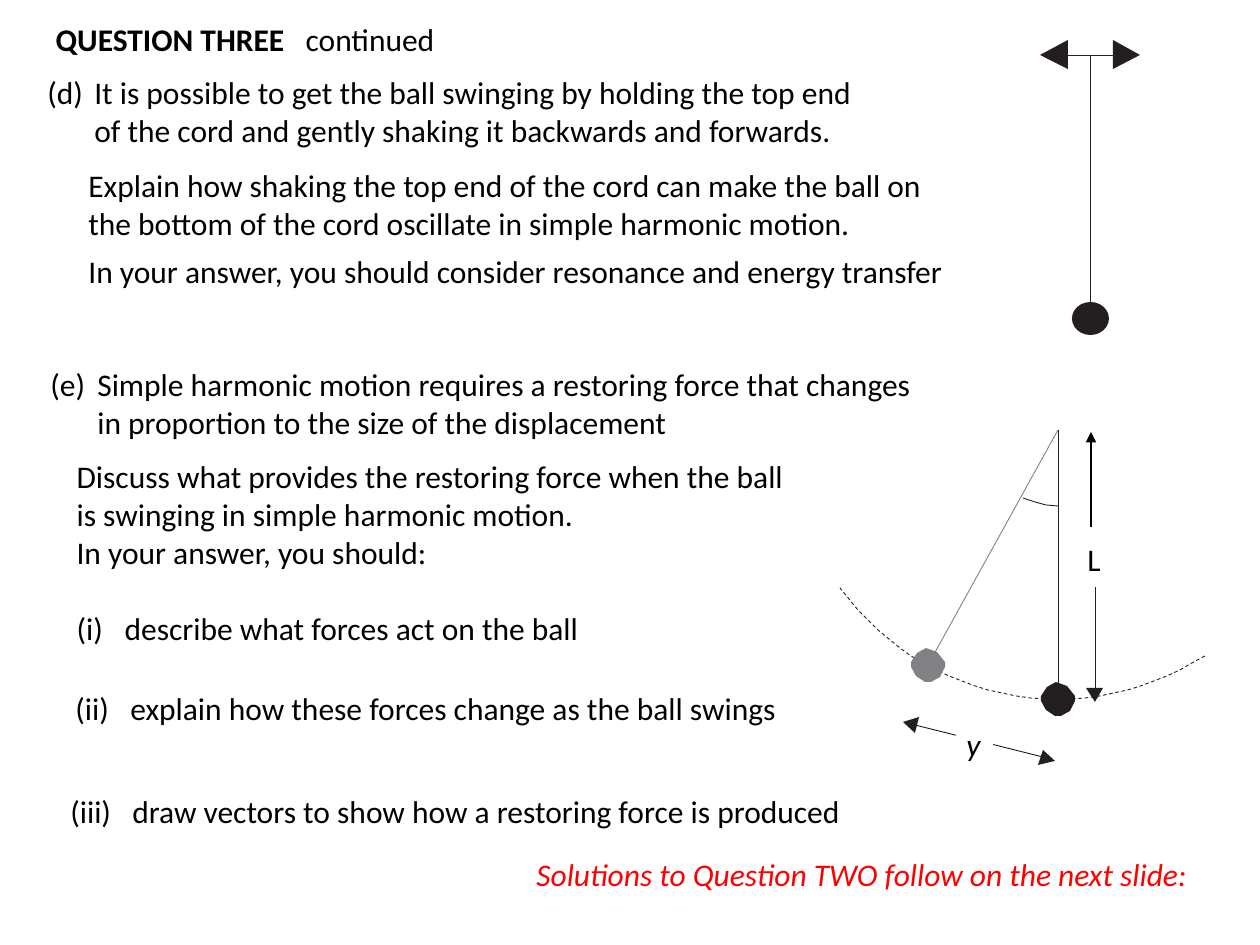
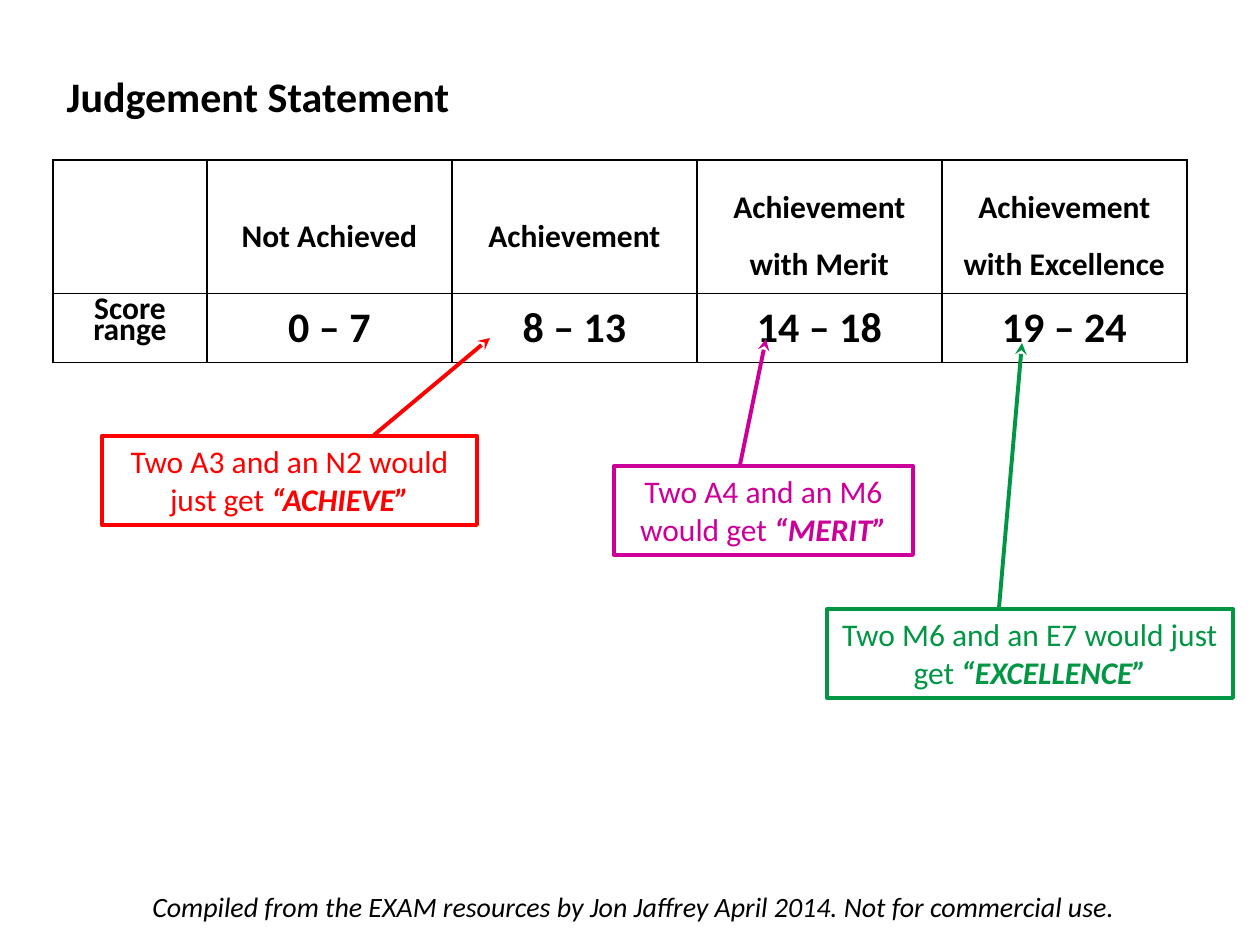
import math
from dataclasses import dataclass

import pptx
import pptx.util
from pptx.dml.color import RGBColor
from pptx.enum.dml import MSO_LINE
from pptx.enum.shapes import MSO_CONNECTOR, MSO_SHAPE
from pptx.enum.text import MSO_ANCHOR, MSO_AUTO_SIZE, PP_ALIGN
from pptx.oxml.ns import qn
from pptx.oxml.xmlchemy import OxmlElement


@dataclass(frozen=True)
class Theme:
    font: str = "Calibri"
    text: str = "000000"
    ink: str = "231F20"
    grey: str = "808285"
    white: str = "FFFFFF"
    red: str = "FF0000"
    pink: str = "CC0099"
    green: str = "009644"
    body: int = 18
    head: int = 24
    foot: int = 16
    thin: float = 0.5
    bold: float = 2.25


T = Theme()
SCALE = 914400 / 126  # EMU in one px


def px(n):
    return round(n * SCALE)


def place(shape, box):
    shape.left, shape.top, shape.width, shape.height = map(px, box)


def rgb(code):
    return RGBColor.from_string(code)


def node(parent, tag, **attrs):
    item = OxmlElement(tag)
    for key, value in attrs.items():
        item.set(key, str(value))
    parent.append(item)
    return item


# Text

def write(par, parts, size=T.body, color=T.text, align=PP_ALIGN.LEFT):
    """Each part is a text and its style: b for bold, i for italic."""
    for i, (text, style) in enumerate(parts):
        if i == 0:
            par.text = text
            run = par.runs[0]
        else:
            run = par.add_run()
            run.text = text
        font = run.font
        font.name, font.size = T.font, pptx.util.Pt(size)
        font.color.rgb = rgb(color)
        font.bold, font.italic = "b" in style, "i" in style
    par.alignment = align
    par.space_before = pptx.util.Pt(0)


def indent(par, left=0, hang=0, start=None):
    """Hang the first line; with a start, number it (a), (b), ..."""
    props = par._p.get_or_add_pPr()
    props.set("marL", str(px(left + hang)))
    props.set("indent", str(-px(hang)))
    if start:
        node(props, "a:buAutoNum", type="alphaLcParenBoth", startAt=start)
    else:
        node(props, "a:buNone")


def setup(shape, box):
    place(shape, box)
    frame = shape.text_frame
    frame.word_wrap = True
    frame.auto_size = MSO_AUTO_SIZE.NONE
    frame.vertical_anchor = MSO_ANCHOR.TOP
    return frame


def title(slide, box, parts, size, tab=None):
    par = setup(slide.shapes.title, box).paragraphs[0]
    write(par, parts, size)
    if tab:
        stops = node(par._p.get_or_add_pPr(), "a:tabLst")
        node(stops, "a:tab", pos=px(tab), algn="l")


def note(slide, box, text, style="", **look):
    frame = setup(slide.shapes.add_textbox(0, 0, 0, 0), box)
    write(frame.paragraphs[0], [(text, style)], **look)
    return frame.paragraphs[0]


def body(slide, box, lines):
    frame = setup(slide.placeholders[1], box)
    for i, text in enumerate(lines):
        par = frame.add_paragraph() if i else frame.paragraphs[0]
        write(par, [(text, "")])
        indent(par)
    return frame.paragraphs


# Drawing

def paint(shape, fill=None, line=None, width=T.thin):
    shape.shadow.inherit = False
    if fill:
        shape.fill.solid()
        shape.fill.fore_color.rgb = rgb(fill)
    else:
        shape.fill.background()
    if line:
        shape.line.color.rgb = rgb(line)
        shape.line.width = pptx.util.Pt(width)
    else:
        shape.line.fill.background()
    return shape


def preset(slide, kind, box, **look):
    return paint(slide.shapes.add_shape(kind, *map(px, box)), **look)


def trace(slide, points, close=True, **look):
    first, *rest = [(px(x), px(y)) for x, y in points]
    pen = slide.shapes.build_freeform(*first)
    pen.add_line_segments(rest, close=close)
    return paint(pen.convert_to_shape(), **look)


def line(slide, start, end, color=T.ink, width=T.thin, tip=None):
    link = slide.shapes.add_connector(
        MSO_CONNECTOR.STRAIGHT, *map(px, (*start, *end)))
    link.line.color.rgb = rgb(color)
    link.line.width = pptx.util.Pt(width)
    props = link.element.spPr
    if tip:
        node(props.find(qn("a:ln")), "a:tailEnd", type=tip)
    node(props, "a:effectLst")


def polar(hub, radius, angle):
    turn = math.radians(angle)
    return (round(hub[0] + radius * math.cos(turn)),
            round(hub[1] + radius * math.sin(turn)))


def bob(slide, hub, color):
    rim = [(-2, -17), (-11, -12), (-17, -3), (-17, 2), (-12, 11), (-3, 17),
           (3, 17), (12, 12), (17, 2), (17, -3), (9, -13)]
    trace(slide, [(hub[0] + x, hub[1] + y) for x, y in rim], fill=color)


def shaken(slide):
    """Pendulum whose top end is moved from side to side."""
    line(slide, (1090, 55), (1090, 319))
    preset(slide, MSO_SHAPE.OVAL, (1072, 302, 37, 33), fill=T.ink)
    line(slide, (1063, 55), (1118, 55))
    for base, tip in ((1068, 1040), (1113, 1140)):
        trace(slide, [(base, 40), (tip, 55), (base, 69)], fill=T.ink)


def swing(slide):
    """Pendulum at rest and displaced, with length L and distance y."""
    pivot, length, angle = (1058, 430), 269, 119
    low, side = polar(pivot, length, 90), polar(pivot, length, angle)
    path = [polar(pivot, length, a) for a in range(57, 145, 3)]
    arc = trace(slide, path, close=False, line=T.ink)
    arc.line.dash_style = MSO_LINE.DASH
    line(slide, pivot, side, T.grey)
    bob(slide, side, T.grey)
    bob(slide, low, T.ink)
    line(slide, low, pivot)
    mark = [polar(pivot, 76, a) for a in range(90, 118, 9)]
    trace(slide, mark, close=False, line=T.ink)

    # Distance y
    line(slide, (915, 725), (1043, 757))
    trace(slide, [(919, 717), (903, 722), (915, 733)], fill=T.ink)
    trace(slide, [(1043, 750), (1038, 765), (1055, 761)], fill=T.ink)
    preset(slide, MSO_SHAPE.RECTANGLE, (956, 711, 37, 61), fill=T.white)
    note(slide, (954, 719, 60, 50), "y", "i")

    # Length L
    line(slide, (1091, 527), (1091, 432), T.text, 0.75, "triangle")
    note(slide, (1075, 534, 39, 50), "L")
    line(slide, (1095, 587), (1095, 690))
    trace(slide, [(1103, 688), (1086, 688), (1095, 702)], fill=T.ink)


# Table and callouts

def border(cell):
    props = cell._tc.get_or_add_tcPr()
    for i, side in enumerate("LRTB"):
        edge = OxmlElement("a:ln" + side)
        edge.set("w", str(pptx.util.Pt(1)))
        node(node(edge, "a:solidFill"), "a:srgbClr", val=T.text)
        props.insert(i, edge)


def grid(slide, spot, cols, rows, data):
    size = (sum(cols), sum(rows))
    table = slide.shapes.add_table(
        len(rows), len(cols), *map(px, (*spot, *size))).table
    table.first_row = table.horz_banding = False
    for col, width in zip(table.columns, cols):
        col.width = px(width)
    for row, height, texts in zip(table.rows, rows, data):
        row.height = px(height)
        for cell, text in zip(row.cells, texts):
            cell.fill.background()
            border(cell)
            cell.margin_left = cell.margin_right = px(8)
            cell.margin_top = cell.margin_bottom = px(9)
            if text:
                par = cell.text_frame.paragraphs[0]
                score = text[0].isdigit()
                write(par, [(text, "b")], T.head if score else T.body,
                      align=PP_ALIGN.CENTER)
                if not score:
                    cell.vertical_anchor = MSO_ANCHOR.MIDDLE
                    par.space_before = pptx.util.Pt(3)
                    par.line_spacing = 1.5
    return table


def callout(slide, box, color, text, grade, start, end):
    shape = preset(slide, MSO_SHAPE.RECTANGLE, box, line=color, width=T.bold)
    par = setup(shape, box).paragraphs[0]
    write(par, [(text, ""), (grade, "bi")], color=color,
          align=PP_ALIGN.CENTER)
    line(slide, start, end, color, T.bold, "stealth")


# Slides

def question(deck):
    slide = deck.slides.add_slide(deck.slide_layouts[1])
    title(slide, (43, 14, 408, 50),
          [("QUESTION THREE\t", "b"), ("continued", "")], T.body, tab=250)
    part = note(slide, (35, 67, 833, 89), "It is possible to get the ball swinging by holding the top end of the cord and gently shaking it backwards and forwards.")
    indent(part, hang=47, start=4)
    note(slide, (76, 160, 896, 89), "Explain how shaking the top end of the cord can make the ball on the bottom of the cord oscillate in simple harmonic motion.")
    note(slide, (76, 246, 940, 50), "In your answer, you should consider resonance and energy transfer")
    shaken(slide)

    part = note(slide, (38, 359, 905, 89), "Simple harmonic motion requires a restoring force that changes in proportion to the size of the displacement")
    indent(part, hang=47, start=5)
    pars = body(slide, (64, 451, 745, 204), [
        "Discuss what provides the restoring force when the ball is swinging in simple harmonic motion.",
        "In your answer, you should:",
        "(i)\tdescribe what forces act on the ball"])
    pars[-1].space_before = pptx.util.Pt(22)
    indent(pars[-1], hang=48)
    part = note(slide, (0, 683, 808, 50), "(ii)\texplain how these forces change as the ball swings")
    indent(part, left=63, hang=55)
    part = note(slide, (58, 786, 932, 50), "(iii)\tdraw vectors to show how a restoring force is produced")
    indent(part, hang=62)
    swing(slide)
    note(slide, (524, 849, 684, 50), "Solutions to Question TWO follow on the next slide:", "i", color=T.red)


def judgement(deck):
    slide = deck.slides.add_slide(deck.slide_layouts[5])
    note(slide, (140, 883, 1043, 47), "Compiled from the EXAM resources by Jon Jaffrey April 2014. Not for commercial use.", "i", size=T.foot)
    title(slide, (54, 64, 412, 63), [("Judgement Statement", "b")], T.head)
    table = grid(slide, (53, 160), [154] + [245] * 4, [130, 67], [
        ["", "Not Achieved", "Achievement", "Achievement with Merit",
         "Achievement with Excellence"],
        ["Score range", "0 – 7", "8 – 13", "14 – 18", "19 – 24"]])
    label = table.cell(1, 0).text_frame.paragraphs[0]
    label.line_spacing = pptx.util.Pt(12)

    callout(slide, (102, 436, 375, 89), T.red, "Two A3 and an N2 would just get ",
            "“ACHIEVE”", (374, 435), (490, 338))
    callout(slide, (614, 466, 299, 89), T.pink, "Two A4 and an M6 would get ",
            "“MERIT”", (740, 465), (766, 339))
    callout(slide, (827, 609, 406, 89), T.green, "Two M6 and an E7 would just get ",
            "“EXCELLENCE”", (999, 608), (1022, 343))


def main():
    deck = pptx.Presentation()
    deck.slide_width, deck.slide_height = px(1260), px(945)
    question(deck)
    judgement(deck)
    deck.save("out.pptx")


if __name__ == "__main__":
    main()
